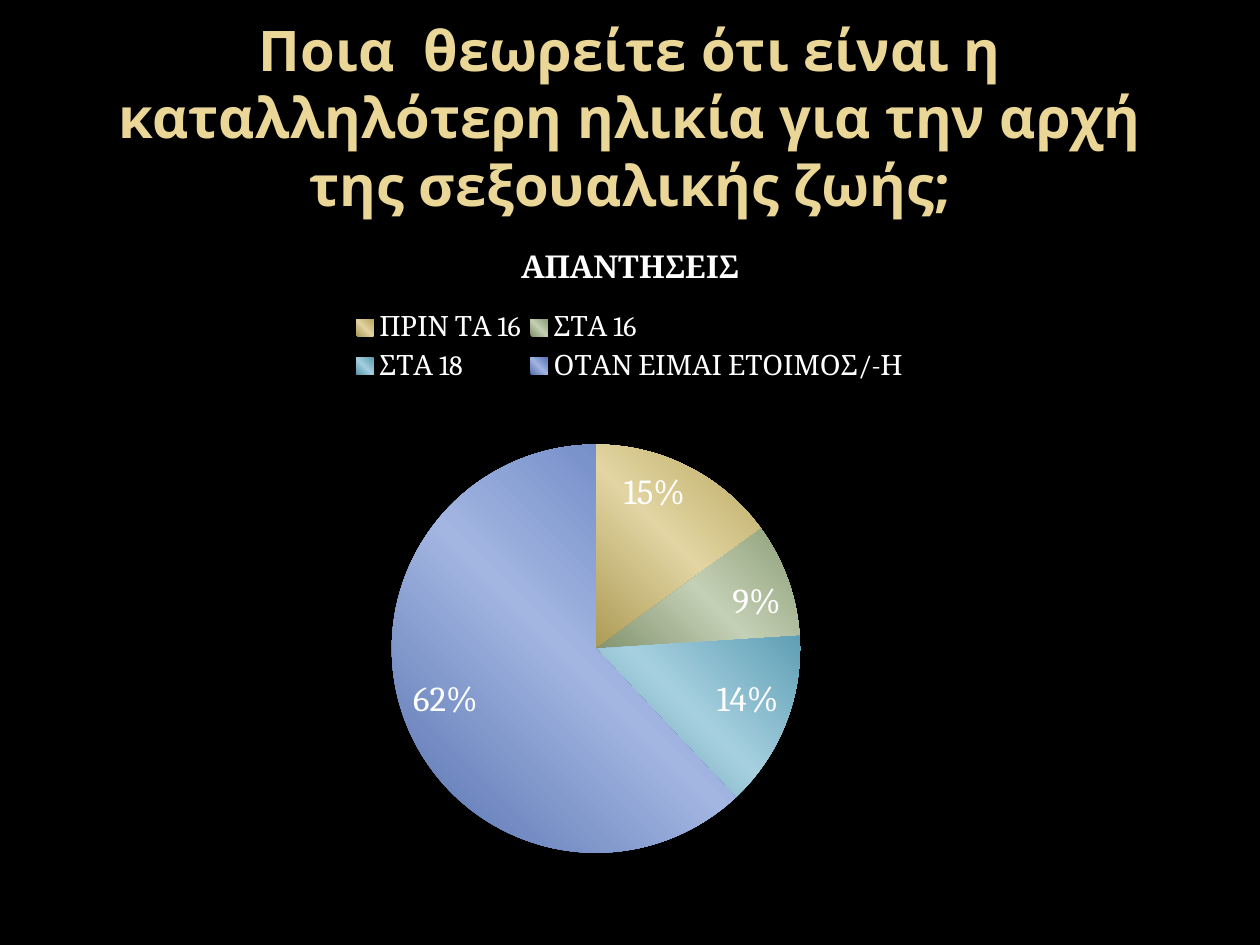
from copy import deepcopy

from lxml import etree
from pptx import Presentation
from pptx.chart.data import CategoryChartData
from pptx.dml.color import RGBColor
from pptx.enum.chart import XL_CHART_TYPE as Kind
from pptx.enum.chart import XL_LABEL_POSITION as Spot
from pptx.enum.chart import XL_LEGEND_POSITION as Side
from pptx.enum.text import MSO_ANCHOR as Anchor
from pptx.enum.text import PP_ALIGN as Align
from pptx.oxml.ns import qn
from pptx.util import Inches, Pt

BLACK = RGBColor(0x00, 0x00, 0x00)
WHITE = RGBColor(0xFF, 0xFF, 0xFF)
CREAM = RGBColor(0xEA, 0xD6, 0x96)
GOLD = RGBColor(0xCE, 0xB9, 0x66)
GREEN = RGBColor(0x9C, 0xB0, 0x84)
TEAL = RGBColor(0x6B, 0xB1, 0xC9)
BLUE = RGBColor(0x65, 0x85, 0xCF)

ANSWERS = [
    ("ΠΡΙΝ ΤΑ 16", 15, GOLD),
    ("ΣΤΑ 16", 9, GREEN),
    ("ΣΤΑ 18", 14, TEAL),
    ("ΟΤΑΝ ΕΙΜΑΙ ΕΤΟΙΜΟΣ/-Η", 62, BLUE),
]


def blend(color, goal, share):
    """Mix a colour with a share of the goal colour."""
    return RGBColor(*(round(a + (b - a) * share) for a, b in zip(color, goal)))


def place(part, index, x, y, w, h, inner=False):
    """Give a chart part a fixed place, in shares of the chart."""
    for old in part.findall(qn("c:layout")):
        part.remove(old)
    layout = etree.Element(qn("c:layout"))
    manual = etree.SubElement(layout, qn("c:manualLayout"))
    rules = [("xMode", "edge"), ("yMode", "edge"),
             ("x", x), ("y", y), ("w", w), ("h", h)]
    if inner:
        rules.insert(0, ("layoutTarget", "inner"))
    for tag, val in rules:
        etree.SubElement(manual, qn(f"c:{tag}")).set("val", str(val))
    part.insert(index, layout)


class Deck:
    head = "Noto Sans"
    body = "Cambria"

    def __init__(self):
        self.prs = Presentation()
        self.prs.slide_width = Inches(10)
        self.prs.slide_height = Inches(7.5)

    def page(self):
        self.slide = self.prs.slides.add_slide(self.prs.slide_layouts[5])
        fill = self.slide.background.fill
        fill.solid()
        fill.fore_color.rgb = BLACK

    def style(self, font, size, bold=False):
        font.name, font.size, font.bold = self.body, Pt(size), bold
        font.color.rgb = WHITE

    def title(self, text, x, y, w, h):
        box = self.slide.shapes.title
        box.left, box.top, box.width, box.height = map(Inches, (x, y, w, h))
        frame = box.text_frame
        frame.word_wrap = True
        frame.vertical_anchor = Anchor.MIDDLE
        para = frame.paragraphs[0]
        para.alignment = Align.CENTER
        run = para.add_run()
        run.text = text
        self.style(run.font, 32, True)
        run.font.name = self.head
        run.font.color.rgb = CREAM

    def shade(self, point, series, index, color):
        """Fill a slice with a light band between darker ends."""
        fill = point.format.fill
        fill.gradient()
        fill.gradient_angle = 45
        stops = list(series._element.iter(qn("a:gsLst")))[index]
        stops.append(deepcopy(stops[0]))
        ends = [(0, blend(color, BLACK, 0.16)),
                (0.5, blend(color, WHITE, 0.4)),
                (1, blend(color, BLACK, 0.1))]
        for stop, (spot, tone) in zip(fill.gradient_stops, ends):
            stop.position = spot
            stop.color.rgb = tone

    def pie(self, name, rows, x, y, w, h):
        data = CategoryChartData()
        data.categories = [row[0] for row in rows]
        data.add_series(name, [row[1] for row in rows])
        chart = self.slide.shapes.add_chart(
            Kind.PIE, *map(Inches, (x, y, w, h)), data).chart
        self.style(chart.font, 10)

        # Heading
        chart.has_title = True
        run = chart.chart_title.text_frame.paragraphs[0].add_run()
        run.text = name
        self.style(run.font, 18, True)

        # Legend
        chart.has_legend = True
        legend = chart.legend
        legend.position = Side.TOP
        legend.include_in_layout = False
        self.style(legend.font, 16)
        place(legend._element, 1, 0.25, 0.13, 0.5, 0.13)

        # Slices and labels
        plot = chart.plots[0]
        plot.vary_by_categories = True
        series = plot.series[0]
        for i, row in enumerate(rows):
            self.shade(series.points[i], series, i, row[2])
        labels = series.data_labels
        labels.show_percentage = True
        labels.show_value = False
        labels.number_format = "0%"
        labels.number_format_is_linked = False
        labels.position = Spot.INSIDE_END
        self.style(labels.font, 20)
        area = chart._chartSpace.chart.plotArea
        place(area, 0, 0.29, 0.34, 0.36, 0.64, inner=True)


def main():
    deck = Deck()
    deck.page()
    deck.title("Πoια  θεωρείτε ότι είναι η καταλληλότερη ηλικία "
               "για την αρχή της σεξουαλικής ζωής;", 0.5, 0.3, 9, 1.25)
    deck.pie("ΑΠΑΝΤΗΣΕΙΣ", ANSWERS, 0.5, 1.75, 9, 5.15)
    deck.prs.save("out.pptx")


if __name__ == "__main__":
    main()
